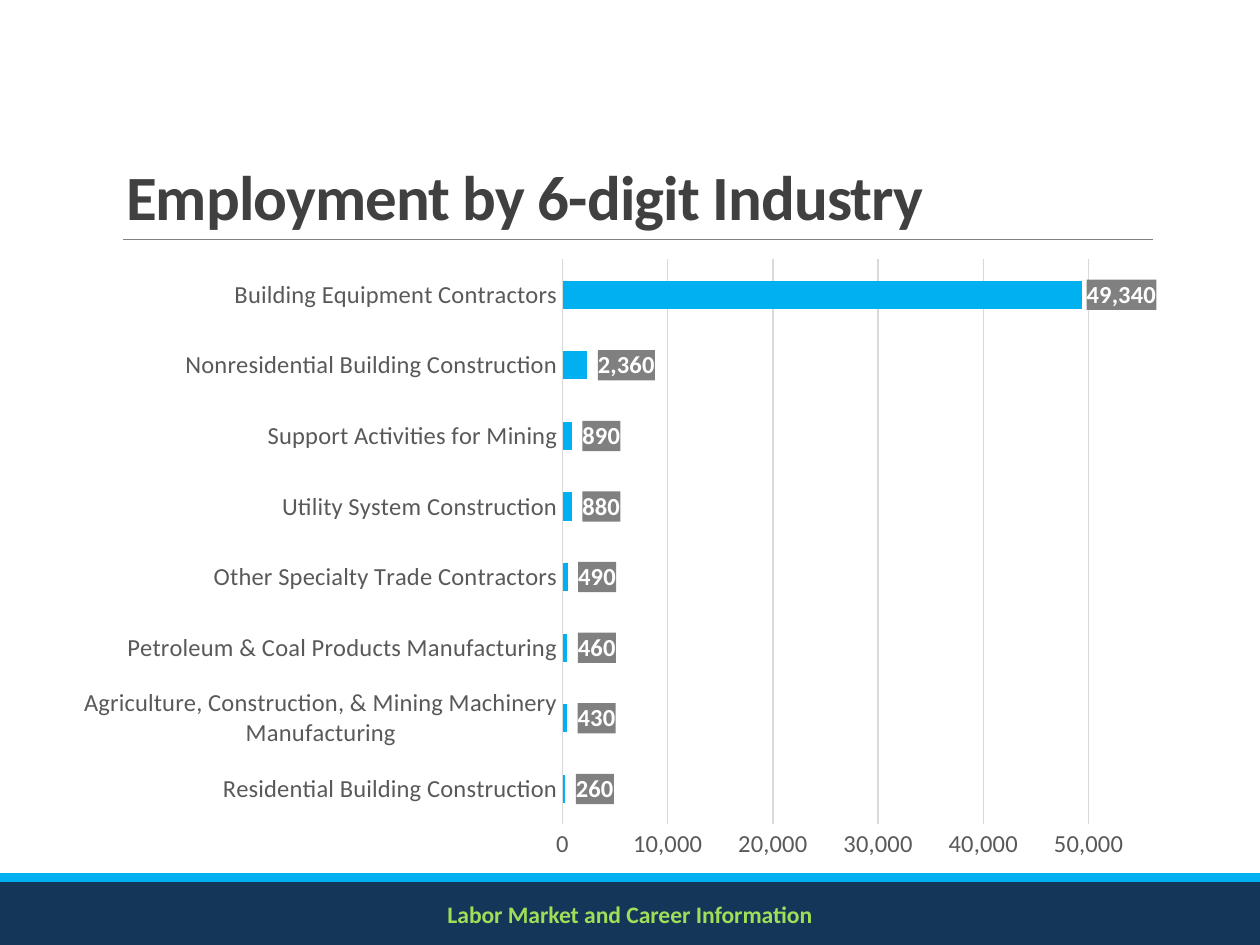
import copy
from dataclasses import dataclass

import lxml.etree
import pptx
import pptx.chart.data
import pptx.dml.color
import pptx.enum.chart
import pptx.enum.shapes
import pptx.enum.text
import pptx.oxml
import pptx.oxml.ns
import pptx.util
from pptx.util import Inches

RGB = pptx.dml.color.RGBColor.from_string
qn = pptx.oxml.ns.qn
NS = pptx.oxml.ns.nsdecls("c")


@dataclass(frozen=True)
class Theme:
    font: str = "Calibri"
    navy: str = "133659"
    blue: str = "00B0F0"
    green: str = "9FDF58"
    grey: str = "808080"
    title: str = "404040"
    axis: str = "595959"
    grid: str = "D9D9D9"
    white: str = "FFFFFF"
    title_size: float = 36
    footer_size: float = 13.5
    chart_size: float = 14


@dataclass(frozen=True)
class Band:
    top: float
    height: float
    color: str


@dataclass(frozen=True)
class Industry:
    name: str
    jobs: int


THEME = Theme()
BANDS = [Band(7, 0.5, THEME.navy), Band(6.93, 0.07, THEME.blue)]
INDUSTRIES = [
    Industry("Residential Building Construction", 260),
    Industry("Agriculture, Construction, & Mining Machinery Manufacturing", 430),
    Industry("Petroleum & Coal Products Manufacturing", 460),
    Industry("Other Specialty Trade Contractors", 490),
    Industry("Utility System Construction", 880),
    Industry("Support Activities for Mining", 890),
    Industry("Nonresidential Building Construction", 2360),
    Industry("Building Equipment Contractors", 49340),
]


def style_font(font, size: float, color: str, bold: bool = False) -> None:
    font.name = THEME.font
    font.size = pptx.util.Pt(size)
    font.bold = bold
    font.color.rgb = RGB(color)


def add_band(slide, band: Band) -> None:
    s = slide.shapes.add_shape(pptx.enum.shapes.MSO_SHAPE.RECTANGLE, 0,
                               Inches(band.top), Inches(10), Inches(band.height))
    s.shadow.inherit = False
    s.fill.solid()
    s.fill.fore_color.rgb = RGB(band.color)
    s.line.fill.background()


def add_rule(slide) -> None:
    line = slide.shapes.add_connector(pptx.enum.shapes.MSO_CONNECTOR.STRAIGHT,
                                      Inches(0.98), Inches(1.9), Inches(9.15), Inches(1.9))
    line.line.color.rgb = RGB(THEME.grey)
    line.line.width = pptx.util.Pt(0.5)
    lxml.etree.SubElement(line._element.spPr, qn("a:effectLst"))


def add_footer(slide) -> None:
    s = slide.shapes.add_textbox(0, Inches(7.08), Inches(10), Inches(0.35))
    tf = s.text_frame
    tf.word_wrap = True
    tf.vertical_anchor = pptx.enum.text.MSO_ANCHOR.MIDDLE
    p = tf.paragraphs[0]
    p.text = "Labor Market and Career Information"
    p.alignment = pptx.enum.text.PP_ALIGN.CENTER
    style_font(p.runs[0].font, THEME.footer_size, THEME.green, True)


def set_title(slide) -> None:
    s = slide.shapes.title
    s.left, s.top, s.width, s.height = (Inches(v) for v in (0.9, 1, 8.25, 0.9))
    tf = s.text_frame
    tf.text = "Employment by 6-digit Industry"
    tf.auto_size = pptx.enum.text.MSO_AUTO_SIZE.NONE
    tf.vertical_anchor = pptx.enum.text.MSO_ANCHOR.BOTTOM
    p = tf.paragraphs[0]
    p.alignment = pptx.enum.text.PP_ALIGN.LEFT
    p.line_spacing = 0.85
    r = p.runs[0]
    style_font(r.font, THEME.title_size, THEME.title, True)
    r._r.get_or_add_rPr().set("spc", "-50")


def style_axis(axis) -> None:
    axis.major_tick_mark = axis.minor_tick_mark = pptx.enum.chart.XL_TICK_MARK.NONE
    axis.format.line.fill.background()
    style_font(axis.tick_labels.font, THEME.chart_size, THEME.axis)


def manual_layout(modes: str, **fractions: float):
    values = "".join(f'<c:{k} val="{v}"/>' for k, v in fractions.items())
    return pptx.oxml.parse_xml(
        f"<c:layout {NS}><c:manualLayout>{modes}{values}</c:manualLayout></c:layout>")


def style_labels(series) -> None:
    labels = series.data_labels
    labels.show_value = True
    labels.number_format = "#,##0"
    labels.number_format_is_linked = False
    labels.position = pptx.enum.chart.XL_LABEL_POSITION.OUTSIDE_END
    style_font(labels.font, THEME.chart_size, THEME.white, True)
    box = labels._element
    for leader in box.findall(qn("c:showLeaderLines")):
        box.remove(leader)
    box.find(qn("c:txPr")).addprevious(pptx.oxml.parse_xml(
        f'<c:spPr {NS} {pptx.oxml.ns.nsdecls("a")}><a:solidFill>'
        f'<a:srgbClr val="{THEME.grey}"/></a:solidFill></c:spPr>'))
    # Labels of the short bars stand a little further out
    shared = list(box)
    for i in range(len(INDUSTRIES) - 1):
        label = pptx.oxml.parse_xml(f'<c:dLbl {NS}><c:idx val="{i}"/></c:dLbl>')
        label.append(manual_layout("", x=0.005, y=0))
        label.extend(copy.deepcopy(child) for child in shared)
        box.insert(i, label)


def add_employment_chart(slide) -> None:
    data = pptx.chart.data.CategoryChartData(number_format="#,##0")
    data.categories = [d.name for d in INDUSTRIES]
    data.add_series("Series 1", [d.jobs for d in INDUSTRIES])
    chart = slide.shapes.add_chart(
        pptx.enum.chart.XL_CHART_TYPE.BAR_CLUSTERED,
        Inches(0.5), Inches(1.96), Inches(8.87), Inches(4.96), data).chart
    chart.has_legend = chart.has_title = False
    style_font(chart.font, 10, "000000")

    # Axes and gridlines
    style_axis(chart.category_axis)
    axis = chart.value_axis
    style_axis(axis)
    axis.minimum_scale, axis.maximum_scale, axis.major_unit = 0, 56500, 10000
    axis.tick_labels.number_format = "#,##0"
    axis.tick_labels.number_format_is_linked = False
    axis.has_major_gridlines = True
    axis.major_gridlines.format.line.color.rgb = RGB(THEME.grid)
    axis.major_gridlines.format.line.width = pptx.util.Pt(0.75)

    # Bars and their labels
    plot = chart.plots[0]
    plot.gap_width = 150
    plot.vary_by_categories = False
    series = plot.series[0]
    series.format.fill.solid()
    series.format.fill.fore_color.rgb = RGB(THEME.blue)
    style_labels(series)

    # Fixed plot area
    area = chart._chartSpace.chart.plotArea
    for old in area.findall(qn("c:layout")):
        area.remove(old)
    modes = ('<c:layoutTarget val="inner"/><c:xMode val="edge"/>'
             '<c:yMode val="edge"/>')
    area.insert(0, manual_layout(modes, x=0.447, y=0.02, w=0.532, h=0.904))


def main() -> None:
    prs = pptx.Presentation()
    prs.slide_width, prs.slide_height = Inches(10), Inches(7.5)
    slide = prs.slides.add_slide(prs.slide_layouts[5])
    for band in BANDS:
        add_band(slide, band)
    add_rule(slide)
    add_footer(slide)
    set_title(slide)
    add_employment_chart(slide)
    prs.save("out.pptx")


if __name__ == "__main__":
    main()
